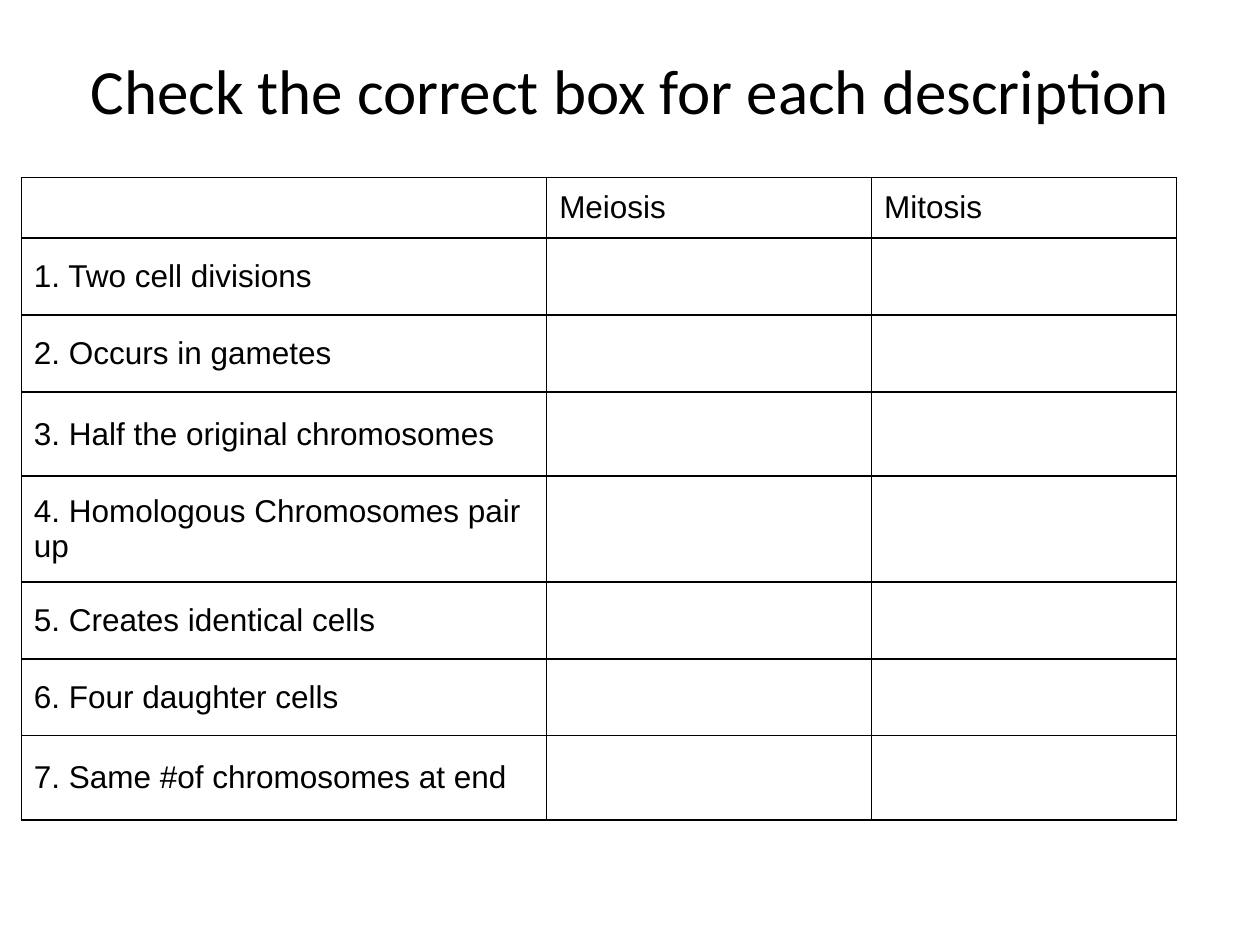
from dataclasses import dataclass

from lxml.etree import SubElement
from pptx import Presentation
from pptx.dml.color import RGBColor
from pptx.enum.text import MSO_ANCHOR, PP_ALIGN
from pptx.oxml.ns import qn
from pptx.slide import Slide
from pptx.table import _Cell
from pptx.text.text import TextFrame
from pptx.util import Cm, Pt


@dataclass(frozen=True)
class Theme:
    ink: str = "000000"
    title_font: str = "Calibri"
    table_font: str = "Arial"
    title_size: int = 36
    table_size: int = 18
    border_width: float = 1


@dataclass(frozen=True)
class Row:
    height: float
    texts: tuple[str, ...]


THEME = Theme()
COLUMN_WIDTHS = (10.59, 6.55, 6.15)
ROWS = (
    Row(1.22, ("", "Meiosis", "Mitosis")),
    Row(1.55, ("1. Two cell divisions",)),
    Row(1.55, ("2. Occurs in gametes",)),
    Row(1.7, ("3. Half the original chromosomes",)),
    Row(2.13, ("4. Homologous Chromosomes pair up",)),
    Row(1.55, ("5. Creates identical cells",)),
    Row(1.55, ("6. Four daughter cells",)),
    Row(1.7, ("7. Same #of chromosomes at end",)),
)


def write_text(frame: TextFrame, text: str, *, font: str, size: float,
               color: str = THEME.ink, align: PP_ALIGN = PP_ALIGN.LEFT) -> None:
    frame.word_wrap = True
    para = frame.paragraphs[0]
    para.alignment = align
    span = para.add_run()
    span.text = text
    span.font.name = font
    span.font.size = Pt(size)
    span.font.color.rgb = RGBColor.from_string(color)


def draw_borders(cell: _Cell) -> None:
    properties = cell._tc.get_or_add_tcPr()
    for side in ("lnL", "lnR", "lnT", "lnB"):
        line = SubElement(properties, qn(f"a:{side}"), w=str(Pt(THEME.border_width)))
        fill = SubElement(line, qn("a:solidFill"))
        SubElement(fill, qn("a:srgbClr"), val=THEME.ink)


def add_title(page: Slide, text: str) -> None:
    box = page.shapes.add_textbox(Cm(1.27), Cm(0.64), Cm(22.86), Cm(2.34))
    box.text_frame.vertical_anchor = MSO_ANCHOR.MIDDLE
    write_text(box.text_frame, text, font=THEME.title_font,
               size=THEME.title_size, align=PP_ALIGN.CENTER)


def add_checklist(page: Slide, rows: tuple[Row, ...]) -> None:
    height = sum(row.height for row in rows)
    table = page.shapes.add_table(
        len(rows), len(COLUMN_WIDTHS), Cm(0.43), Cm(3.58),
        Cm(sum(COLUMN_WIDTHS)), Cm(height),
    ).table
    table.first_row = False
    table.horz_banding = False
    for column, width in zip(table.columns, COLUMN_WIDTHS):
        column.width = Cm(width)
    for table_row, row in zip(table.rows, rows):
        table_row.height = Cm(row.height)
        for cell in table_row.cells:
            draw_borders(cell)
            cell.fill.background()
            cell.vertical_anchor = MSO_ANCHOR.MIDDLE
        for cell, text in zip(table_row.cells, row.texts):
            if text:
                write_text(cell.text_frame, text, font=THEME.table_font,
                           size=THEME.table_size)


def main() -> None:
    deck = Presentation()
    deck.slide_width = Cm(25.4)
    deck.slide_height = Cm(19.05)
    page = deck.slides.add_slide(deck.slide_layouts[6])
    add_title(page, "Check the correct box for each description")
    add_checklist(page, ROWS)
    deck.save("out.pptx")


if __name__ == "__main__":
    main()
